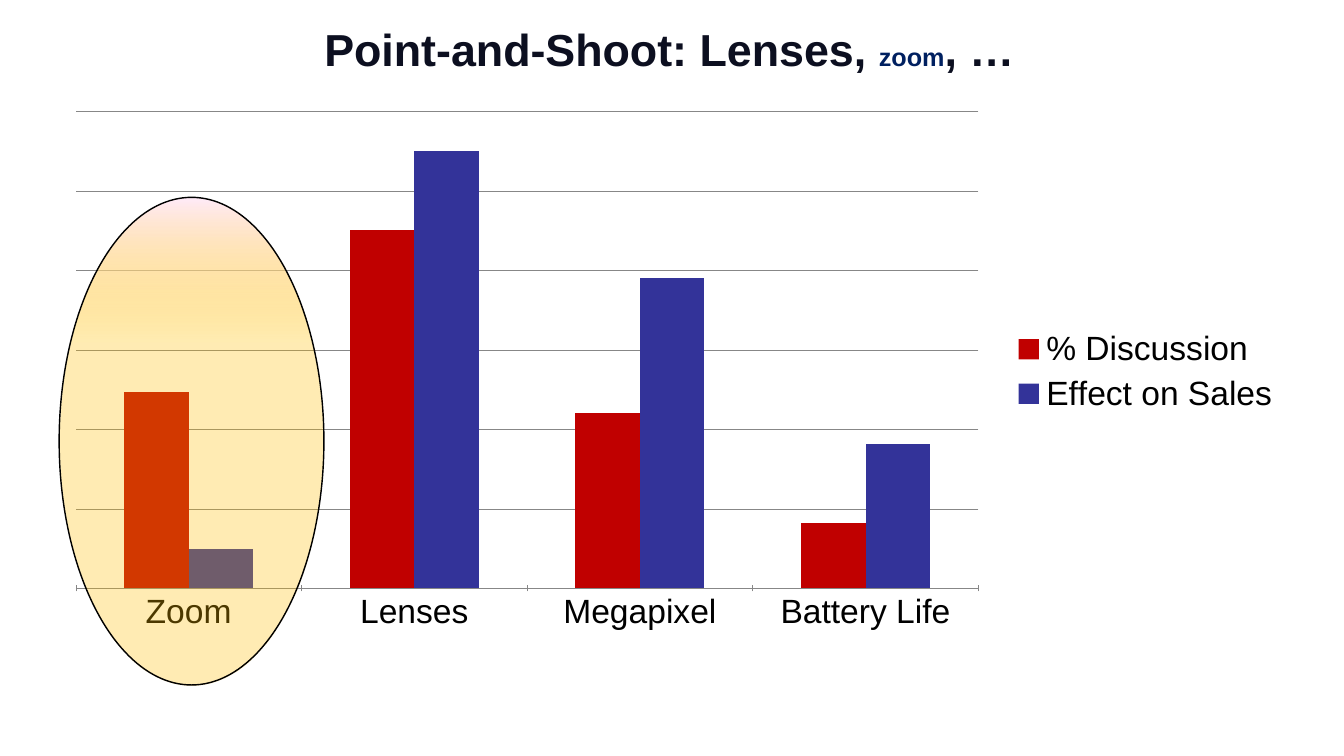
from dataclasses import dataclass

from lxml import etree
from pptx import Presentation
from pptx.chart.data import CategoryChartData
from pptx.dml.color import RGBColor
from pptx.enum.chart import XL_CHART_TYPE, XL_LEGEND_POSITION, XL_TICK_LABEL_POSITION, XL_TICK_MARK
from pptx.enum.shapes import MSO_SHAPE
from pptx.enum.text import MSO_ANCHOR, MSO_AUTO_SIZE, PP_ALIGN
from pptx.oxml.ns import qn
from pptx.util import Inches, Pt

COLUMNS = XL_CHART_TYPE.COLUMN_CLUSTERED
LEGEND_RIGHT = XL_LEGEND_POSITION.RIGHT
NO_LABELS = XL_TICK_LABEL_POSITION.NONE
TICK_CROSS, TICK_NONE = XL_TICK_MARK.CROSS, XL_TICK_MARK.NONE
ELLIPSE = MSO_SHAPE.OVAL
MIDDLE, CENTER = MSO_ANCHOR.MIDDLE, PP_ALIGN.CENTER
NO_AUTOFIT = MSO_AUTO_SIZE.NONE
TITLE_ONLY = 5
WIDTH, HEIGHT = Inches(26.67), Inches(15)


@dataclass(frozen=True)
class Theme:
    """Typeface, type sizes and colours of the slide."""
    font: str = "Arial"
    title_size: float = 64
    aside_size: float = 36
    chart_size: float = 48
    title: str = "0C0F20"
    aside: str = "002060"
    text: str = "000000"
    grid: str = "878787"
    series: tuple = ("C00000", "333399")
    highlight: str = "FFC000"
    highlight_edge: str = "FFEBFA"


THEME = Theme()
TITLE_RUNS = (
    ("Point-and-Shoot: Lenses, ", THEME.title_size, THEME.title),
    ("zoom", THEME.aside_size, THEME.aside),
    (", …", THEME.title_size, THEME.title),
)
CATEGORIES = ("Zoom", "Lenses", "Megapixel", "Battery Life")
SERIES = {"% Discussion": (45, 82, 40, 15), "Effect on Sales": (9, 100, 71, 33)}
GRID_STEP, GRID_ROWS = 18.18, 6
PLOT_SHARES = {"x": 0.02, "y": 0.02, "w": 0.73, "h": 0.88}


def color(value):
    """Turn a hex string into a colour."""
    return RGBColor.from_string(value)


def share_box(left, top, width, height):
    """Turn shares of the slide into left, top, width and height."""
    return tuple(int(part * size) for part, size in
                 zip((left, top, width, height), (WIDTH, HEIGHT) * 2))


def place_title(slide, box):
    """Format the title placeholder inside its box."""
    title = slide.shapes.title
    title.left, title.top, title.width, title.height = box
    frame = title.text_frame
    frame.auto_size, frame.word_wrap = NO_AUTOFIT, True
    frame.vertical_anchor = MIDDLE
    frame.margin_left = frame.margin_right = Inches(0.06)
    frame.margin_top = frame.margin_bottom = Inches(0.06)
    paragraph = frame.paragraphs[0]
    paragraph.alignment = CENTER
    paragraph.font.name, paragraph.font.bold = THEME.font, True
    for text, size, shade in TITLE_RUNS:
        run = paragraph.add_run()
        run.text = text
        run.font.size = Pt(size)
        run.font.color.rgb = color(shade)


def set_plot_layout(chart):
    """Fix the inner plot area as shares of the chart."""
    plot_area = chart._chartSpace.find(".//" + qn("c:plotArea"))
    for old in plot_area.findall(qn("c:layout")):
        plot_area.remove(old)
    layout = etree.Element(qn("c:layout"))
    manual = etree.SubElement(layout, qn("c:manualLayout"))
    settings = {"layoutTarget": "inner", "xMode": "edge", "yMode": "edge", **PLOT_SHARES}
    for name, value in settings.items():
        etree.SubElement(manual, qn(f"c:{name}")).set("val", str(value))
    plot_area.insert(0, layout)


def place_chart(slide, box):
    """Draw the column chart of discussion against sales."""
    data = CategoryChartData()
    data.categories = CATEGORIES
    for name, values in SERIES.items():
        data.add_series(name, values)
    chart = slide.shapes.add_chart(COLUMNS, *box, data).chart
    chart.has_title = False
    chart.font.name, chart.font.size = THEME.font, Pt(THEME.chart_size)
    chart.font.color.rgb = color(THEME.text)
    chart.has_legend = True
    chart.legend.position = LEGEND_RIGHT
    chart.legend.include_in_layout = False

    plot = chart.plots[0]
    plot.gap_width, plot.overlap, plot.vary_by_categories = 150, 0, False
    for series, shade in zip(plot.series, THEME.series):
        series.format.fill.solid()
        series.format.fill.fore_color.rgb = color(shade)

    value_axis, category_axis = chart.value_axis, chart.category_axis
    value_axis.minimum_scale = 0
    value_axis.maximum_scale = GRID_STEP * GRID_ROWS
    value_axis.major_unit = GRID_STEP
    value_axis.has_major_gridlines = True
    value_axis.major_tick_mark = TICK_NONE
    value_axis.tick_label_position = NO_LABELS
    value_axis.visible = False
    category_axis.major_tick_mark = TICK_CROSS
    for part in (value_axis.major_gridlines, category_axis):
        part.format.line.color.rgb = color(THEME.grid)
        part.format.line.width = Pt(0.75)
    set_plot_layout(chart)


def place_highlight(slide, box):
    """Lay a translucent ellipse over the first category."""
    ellipse = slide.shapes.add_shape(ELLIPSE, *box)
    ellipse.shadow.inherit = False
    ellipse.rotation = 180
    ellipse.line.color.rgb = color(THEME.text)
    ellipse.line.width = Pt(2)
    ellipse.fill.gradient()
    ellipse.fill.gradient_angle = 270
    stops = ellipse.fill.gradient_stops
    for stop, position, shade in zip(stops, (0.7, 1), (THEME.highlight, THEME.highlight_edge)):
        stop.position = position
        stop.color.rgb = color(shade)
    body = ellipse._element.find(".//" + qn("a:gradFill")).find(".//" + qn("a:srgbClr"))
    etree.SubElement(body, qn("a:alpha")).set("val", "29000")


def main():
    """Build and save the slide."""
    presentation = Presentation()
    presentation.slide_width, presentation.slide_height = WIDTH, HEIGHT
    slide = presentation.slides.add_slide(presentation.slide_layouts[TITLE_ONLY])
    place_title(slide, share_box(0.038, 0, 0.92, 0.129))
    place_chart(slide, share_box(0.038, 0.133, 0.92, 0.717))
    place_highlight(slide, share_box(0.044, 0.261, 0.197, 0.645))
    presentation.save("out.pptx")


if __name__ == "__main__":
    main()
